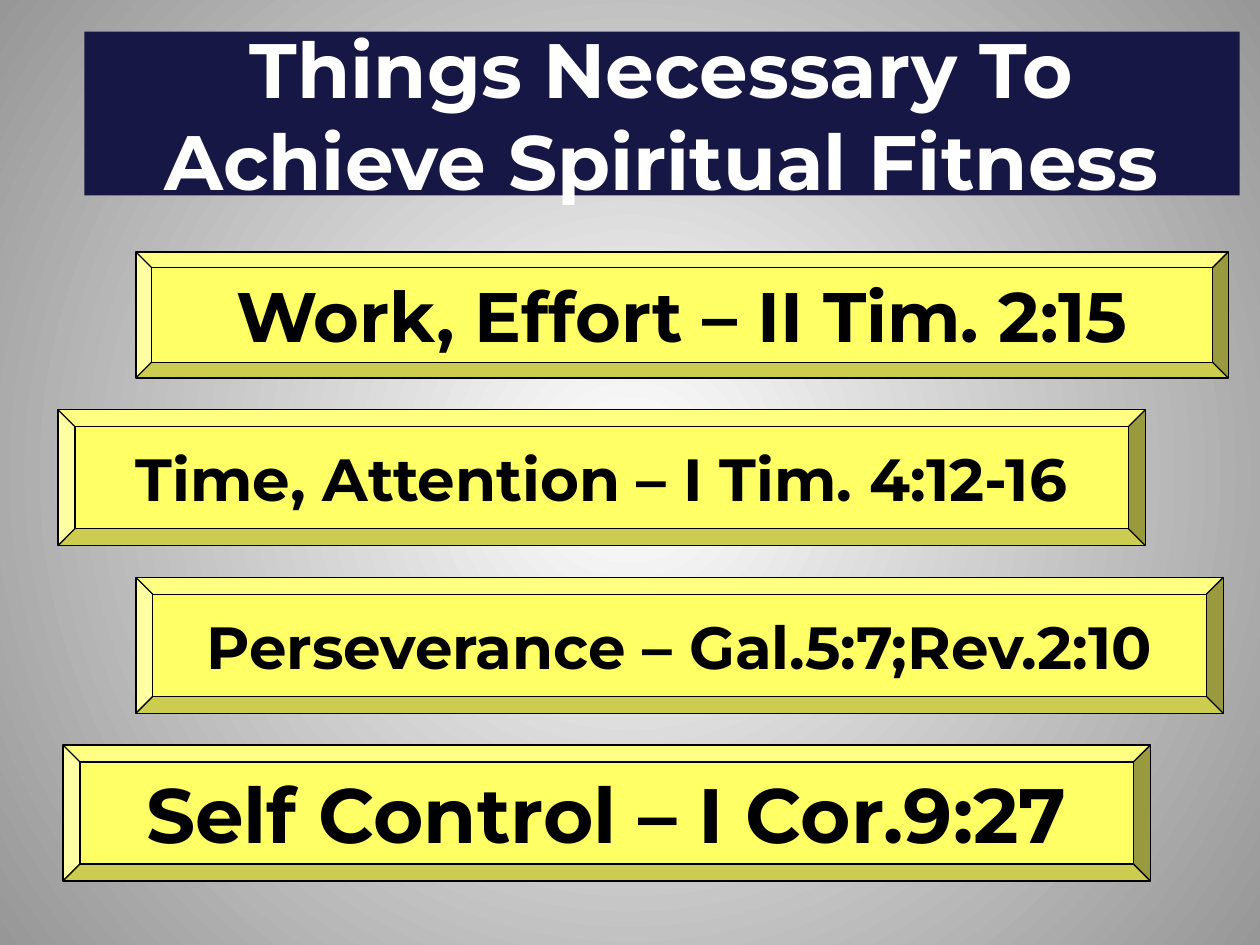
import pptx
import pptx.dml.color
import pptx.enum.shapes
import pptx.enum.text
import pptx.oxml
import pptx.util
from pptx.oxml.ns import nsdecls

Cm = pptx.util.Cm
Kind = pptx.enum.shapes.MSO_SHAPE


def rgb(code):
    return pptx.dml.color.RGBColor.from_string(code)


class Deck:
    """Holds the style and the current slide."""

    font = "Montserrat"
    navy, gold, ink, white, gray = "171745", "FFFF66", "000000", "FFFFFF", "979797"

    def __init__(self):
        self.prs = pptx.Presentation()
        self.prs.slide_width, self.prs.slide_height = Cm(25.4), Cm(19.05)
        self.slide = self.prs.slides.add_slide(self.prs.slide_layouts[6])

    def glow(self):
        fill = self.slide.background.fill
        fill.gradient()
        for stop, code in zip(fill.gradient_stops, (self.white, self.gray)):
            stop.color.rgb = rgb(code)
        lin = self.slide.element.xpath(".//p:bg//a:lin")[0]
        lin.getparent().replace(lin, pptx.oxml.parse_xml(
            f'<a:path {nsdecls("a")} path="circle">'
            '<a:fillToRect l="50000" t="50000" r="50000" b="50000"/></a:path>'))

    def block(self, kind, box, fill, text, size, color, wrap):
        shape = self.slide.shapes.add_shape(kind, *map(Cm, box))
        shape.shadow.inherit = False
        shape.fill.solid()
        shape.fill.fore_color.rgb = rgb(fill)
        frame = shape.text_frame
        frame.word_wrap = wrap
        frame.vertical_anchor = pptx.enum.text.MSO_ANCHOR.MIDDLE
        para = frame.paragraphs[0]
        para.text = text
        para.alignment = pptx.enum.text.PP_ALIGN.CENTER
        para.font.name, para.font.size = self.font, pptx.util.Pt(size)
        para.font.bold, para.font.color.rgb = True, rgb(color)
        return shape

    def title(self, box, text):
        shape = self.block(Kind.RECTANGLE, box, self.navy, text, 44, self.white, True)
        shape.line.fill.background()

    def bar(self, box, text, size):
        shape = self.block(Kind.BEVEL, box, self.gold, text, size, self.ink, False)
        shape.adjustments[0] = 0.125
        shape.line.color.rgb = rgb(self.ink)
        shape.line.width = pptx.util.Pt(0.75)


def main():
    deck = Deck()
    deck.glow()
    deck.title((1.7, 0.64, 23.29, 3.3), "Things Necessary To Achieve Spiritual Fitness")
    bars = [
        (2.74, 22.02, 2.54, "Work, Effort – II Tim. 2:15", 40),
        (1.17, 21.92, 2.74, "Time, Attention – I Tim. 4:12-16", 34),
        (2.74, 21.92, 2.74, "Perseverance – Gal.5:7;Rev.2:10", 34),
        (1.27, 21.92, 2.74, "Self Control – I Cor.9:27", 44),
    ]
    top, gap = 5.08, 0.64
    for left, width, height, text, size in bars:
        deck.bar((left, top, width, height), text, size)
        top += height + gap
    deck.prs.save("out.pptx")


if __name__ == "__main__":
    main()
